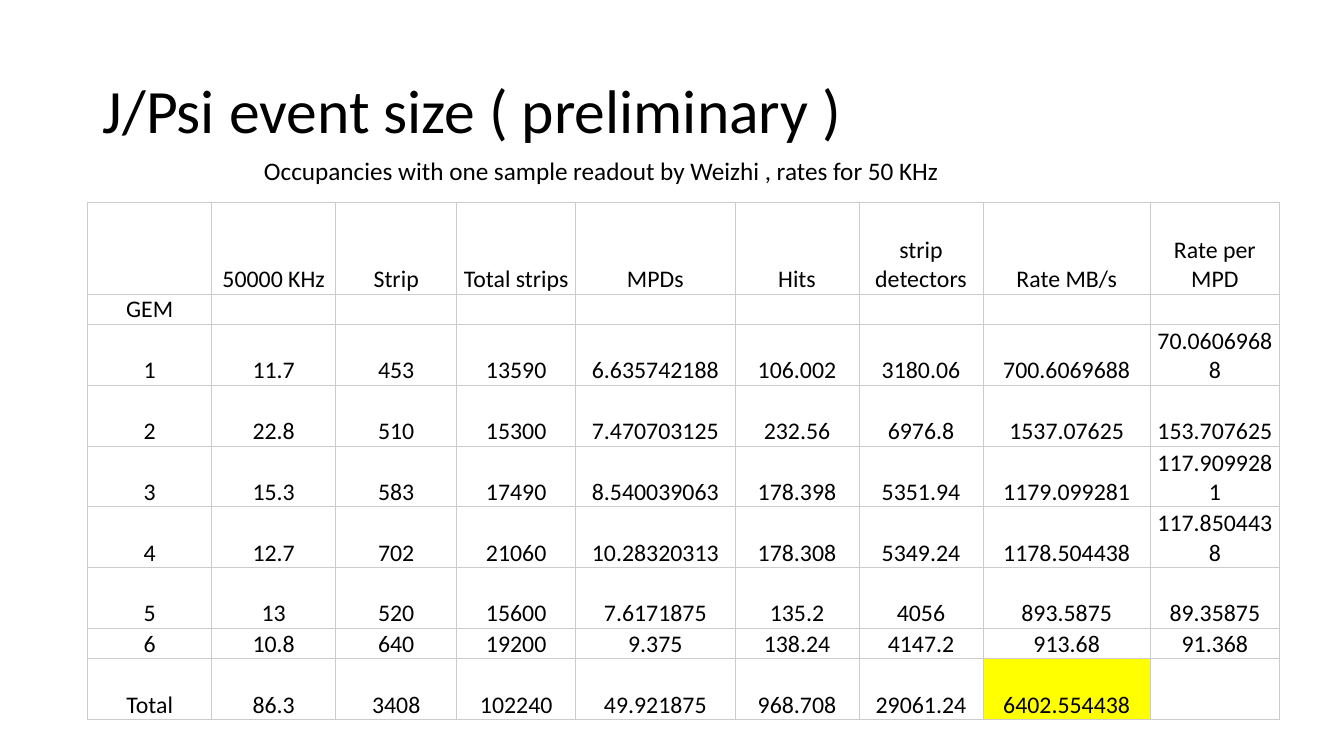
from dataclasses import dataclass

from lxml import etree
from pptx import Presentation
from pptx.dml.color import RGBColor
from pptx.enum.text import MSO_ANCHOR, PP_ALIGN
from pptx.oxml.ns import qn
from pptx.slide import Slide
from pptx.table import Table, _Cell
from pptx.text.text import _Paragraph
from pptx.util import Inches, Pt

TOP, MIDDLE, BOTTOM = MSO_ANCHOR.TOP, MSO_ANCHOR.MIDDLE, MSO_ANCHOR.BOTTOM
CENTER = PP_ALIGN.CENTER
BLACK = RGBColor(0x00, 0x00, 0x00)
YELLOW = RGBColor(0xFF, 0xFF, 0x00)
GREY = RGBColor(0xCC, 0xCC, 0xCC)
FONT = "Calibri"

WIDTHS = (1.23, 1.23, 1.2, 1.18, 1.58, 1.23, 1.23, 1.66, 1.28)
LINES = (3, 1, 2, 2, 2, 2, 2, 1, 2)  # text lines each row has room for
HEIGHT = 5.13
RATES = (
    ("", "50000 KHz", "Strip", "Total strips", "MPDs", "Hits",
     "strip detectors", "Rate MB/s", "Rate per MPD"),
    ("GEM", "", "", "", "", "", "", "", ""),
    ("1", "11.7", "453", "13590", "6.635742188", "106.002",
     "3180.06", "700.6069688", "70.06069688"),
    ("2", "22.8", "510", "15300", "7.470703125", "232.56",
     "6976.8", "1537.07625", "153.707625"),
    ("3", "15.3", "583", "17490", "8.540039063", "178.398",
     "5351.94", "1179.099281", "117.9099281"),
    ("4", "12.7", "702", "21060", "10.28320313", "178.308",
     "5349.24", "1178.504438", "117.8504438"),
    ("5", "13", "520", "15600", "7.6171875", "135.2",
     "4056", "893.5875", "89.35875"),
    ("6", "10.8", "640", "19200", "9.375", "138.24",
     "4147.2", "913.68", "91.368"),
    ("Total", "86.3", "3408", "102240", "49.921875", "968.708",
     "29061.24", "6402.554438", ""),
)
SUM_CELL = (8, 7)


@dataclass
class Label:
    text: str
    left: float
    top: float
    width: float
    height: float
    size: int
    anchor: MSO_ANCHOR
    wrap: bool
    spacing: float


LABELS = (
    Label("J/Psi event size ( preliminary )",
          0.92, 0.4, 11.5, 1.45, 44, MIDDLE, True, 0.9),
    Label("Occupancies with one sample readout by Weizhi , rates for 50 KHz",
          2.52, 1.49, 7.04, 0.4, 18, TOP, False, 1.0),
)


def style(para: _Paragraph, size: int) -> None:
    para.font.name = FONT
    para.font.size = Pt(size)
    para.font.color.rgb = BLACK


def add_label(slide: Slide, label: Label) -> None:
    box = slide.shapes.add_textbox(
        Inches(label.left), Inches(label.top),
        Inches(label.width), Inches(label.height))
    frame = box.text_frame
    frame.word_wrap = label.wrap
    frame.vertical_anchor = label.anchor
    para = frame.paragraphs[0]
    para.text = label.text
    para.line_spacing = label.spacing
    style(para, label.size)


def add_border(cell: _Cell) -> None:
    props = cell._tc.get_or_add_tcPr()
    for spot, side in enumerate(("lnL", "lnR", "lnT", "lnB")):
        line = etree.Element(qn(f"a:{side}"), w=str(Pt(0.5)))
        fill = etree.SubElement(line, qn("a:solidFill"))
        etree.SubElement(fill, qn("a:srgbClr"), val=str(GREY))
        props.insert(spot, line)


def fill_cell(cell: _Cell, text: str, is_sum: bool) -> None:
    cell.margin_left = cell.margin_right = Inches(0.02)
    cell.margin_top = cell.margin_bottom = 0
    cell.vertical_anchor = BOTTOM
    para = cell.text_frame.paragraphs[0]
    para.text = text
    para.alignment = CENTER
    style(para, 17)
    if is_sum:
        cell.fill.solid()
        cell.fill.fore_color.rgb = YELLOW
    else:
        cell.fill.background()
    add_border(cell)


def add_rates(slide: Slide) -> Table:
    table = slide.shapes.add_table(
        len(RATES), len(WIDTHS), Inches(0.87), Inches(2.01),
        Inches(sum(WIDTHS)), Inches(HEIGHT)).table
    table.first_row = table.horz_banding = False
    for column, width in zip(table.columns, WIDTHS):
        column.width = Inches(width)
    for row, lines in zip(table.rows, LINES):
        row.height = Inches(HEIGHT * lines / sum(LINES))
    for r, texts in enumerate(RATES):
        for c, text in enumerate(texts):
            fill_cell(table.cell(r, c), text, (r, c) == SUM_CELL)
    return table


def main() -> None:
    deck = Presentation()
    deck.slide_width, deck.slide_height = Inches(13.33), Inches(7.5)
    slide = deck.slides.add_slide(deck.slide_layouts[6])
    for label in LABELS:
        add_label(slide, label)
    add_rates(slide)
    deck.save("out.pptx")


if __name__ == "__main__":
    main()
